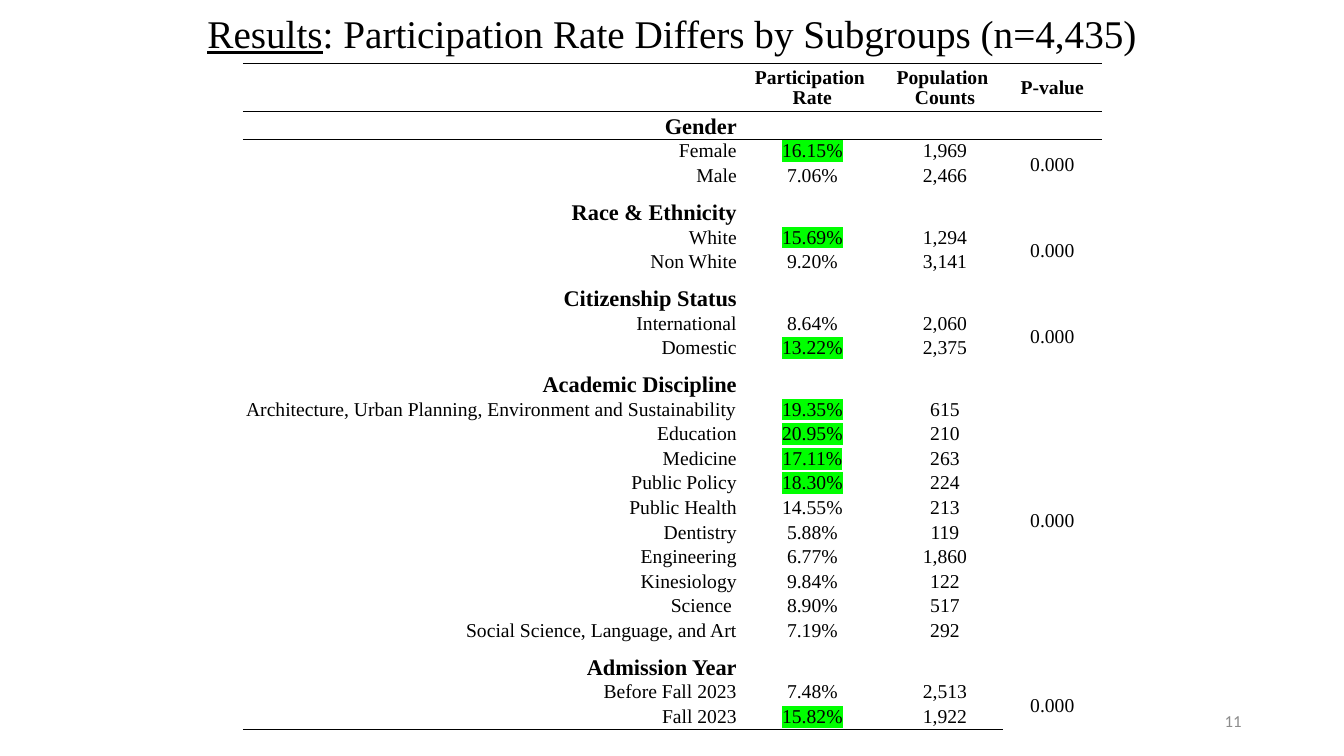
from lxml.etree import SubElement
from pptx import Presentation
from pptx.dml.color import RGBColor
from pptx.enum.text import MSO_ANCHOR as Anchor, PP_ALIGN as Align
from pptx.oxml import parse_xml
from pptx.oxml.ns import nsdecls, qn
from pptx.util import Pt

BLACK = RGBColor(0x00, 0x00, 0x00)
GRAY = RGBColor(0x8C, 0x8C, 0x8C)
GREEN = RGBColor(0x00, 0xFF, 0x00)
SERIF, SANS = "Times New Roman", "Calibri"
PLAIN_TABLE_STYLE = "{2D5ABB26-0587-4C30-8999-92F81FD0307C}"

COLUMN_WIDTHS = (353.5, 106.6, 82.8, 70.6)
HEADER_HEIGHT, FIRST_GROUP_HEIGHT, GROUP_HEIGHT, ROW_HEIGHT = 34.3, 19.1, 26.4, 17.3
HEADERS = (["Participation ", "Rate"], ["Population ", "Counts"], ["P-value"])

# Group, p-value, then (subgroup, rate, count, highlighted)
GROUPS = [
    ("Gender", "0.000", [
        ("Female", "16.15%", "1,969", True),
        ("Male", "7.06%", "2,466", False)]),
    ("Race & Ethnicity", "0.000", [
        ("White", "15.69%", "1,294", True),
        ("Non White", "9.20%", "3,141", False)]),
    ("Citizenship Status", "0.000", [
        ("International", "8.64%", "2,060", False),
        ("Domestic", "13.22%", "2,375", True)]),
    ("Academic Discipline", "0.000", [
        ("Architecture, Urban Planning, Environment and Sustainability",
         "19.35%", "615", True),
        ("Education", "20.95%", "210", True),
        ("Medicine", "17.11%", "263", True),
        ("Public Policy", "18.30%", "224", True),
        ("Public Health", "14.55%", "213", False),
        ("Dentistry", "5.88%", "119", False),
        ("Engineering", "6.77%", "1,860", False),
        ("Kinesiology", "9.84%", "122", False),
        ("Science ", "8.90%", "517", False),
        ("Social Science, Language, and Art", "7.19%", "292", False)]),
    ("Admission Year", "0.000", [
        ("Before Fall 2023", "7.48%", "2,513", False),
        ("Fall 2023", "15.82%", "1,922", True)]),
]


def add_run(paragraph, text, size, font=SERIF, color=BLACK, bold=False,
            underline=False, highlight=None):
    run = paragraph.add_run()
    run.text = text
    run.font.size = Pt(size)
    run.font.name = font
    run.font.bold = bold
    run.font.underline = underline
    run.font.color.rgb = color
    if highlight is not None:
        run.font.fill._xPr.find(qn("a:solidFill")).addnext(parse_xml(
            f'<a:highlight {nsdecls("a")}><a:srgbClr val="{highlight}"/></a:highlight>'))


def add_text_box(slide, left, top, width, height, align, anchor):
    frame = slide.shapes.add_textbox(
        Pt(left), Pt(top), Pt(width), Pt(height)).text_frame
    frame.word_wrap = True
    frame.vertical_anchor = anchor
    paragraph = frame.paragraphs[0]
    paragraph.alignment = align
    return paragraph


def add_title(slide, left, top, width, height):
    title = add_text_box(slide, left, top, width, height, Align.CENTER, Anchor.TOP)
    add_run(title, "Results", 28, underline=True)
    add_run(title, ": Participation Rate Differs by Subgroups (n=4,435)", 28)


def add_page_number(slide, left, top, width, height):
    number = add_text_box(slide, left, top, width, height, Align.RIGHT, Anchor.MIDDLE)
    add_run(number, "11", 12, font=SANS, color=GRAY)


def write_cell(cell, lines, align=Align.CENTER, anchor=Anchor.TOP, size=14,
               bold=False, highlight=None):
    cell.vertical_anchor = anchor
    frame = cell.text_frame
    for index, line in enumerate(lines):
        paragraph = frame.add_paragraph() if index else frame.paragraphs[0]
        paragraph.alignment = align
        if len(lines) > 1:
            paragraph.line_spacing = 0.93
        add_run(paragraph, line, size, bold=bold, highlight=highlight)


def rule_row(table, row, sides, width):
    for column in range(len(COLUMN_WIDTHS)):
        properties = table.cell(row, column)._tc.get_or_add_tcPr()
        for position, side in enumerate(sides):
            properties.insert(position, parse_xml(
                f'<a:ln{side} {nsdecls("a")} w="{Pt(width)}"><a:solidFill>'
                f'<a:srgbClr val="{BLACK}"/></a:solidFill></a:ln{side}>'))


def add_results_table(slide, left, top):
    heights = [HEADER_HEIGHT]
    for index, (_, _, subgroups) in enumerate(GROUPS):
        heights.append(GROUP_HEIGHT if index else FIRST_GROUP_HEIGHT)
        heights += [ROW_HEIGHT] * len(subgroups)
    table = slide.shapes.add_table(
        len(heights), len(COLUMN_WIDTHS), Pt(left), Pt(top),
        Pt(sum(COLUMN_WIDTHS)), Pt(sum(heights))).table
    table.first_row = table.horz_banding = False
    table._tbl.tblPr.find(qn("a:tableStyleId")).text = PLAIN_TABLE_STYLE
    for column, width in zip(table.columns, COLUMN_WIDTHS):
        column.width = Pt(width)
    for row, height in zip(table.rows, heights):
        row.height = Pt(height)
    for cell in table.iter_cells():
        cell.fill.background()
        cell.margin_left = cell.margin_right = cell.margin_top = Pt(0.72)
        cell.margin_bottom = 0

    # Header
    for column, lines in enumerate(HEADERS, 1):
        write_cell(table.cell(0, column), lines, anchor=Anchor.MIDDLE, bold=True)

    # Groups with their subgroups
    row = 1
    for group, p_value, subgroups in GROUPS:
        write_cell(table.cell(row, 0), [group], Align.RIGHT, Anchor.BOTTOM, 16, True)
        first, last = row + 1, row + len(subgroups)
        for row, (subgroup, rate, count, highlighted) in enumerate(subgroups, first):
            write_cell(table.cell(row, 0), [subgroup], Align.RIGHT)
            write_cell(table.cell(row, 1), [rate],
                       highlight=GREEN if highlighted else None)
            write_cell(table.cell(row, 2), [count])
        table.cell(first, 3).merge(table.cell(last, 3))
        write_cell(table.cell(first, 3), [p_value], anchor=Anchor.MIDDLE)
        row = last + 1

    # Small type in empty cells keeps the rows tight
    for cell in table.iter_cells():
        if not cell.text_frame.text:
            SubElement(cell.text_frame.paragraphs[0]._p, qn("a:endParaRPr"), sz="1400")

    # Horizontal rules
    rule_row(table, 0, "TB", 0.5)
    rule_row(table, 1, "T", 0.5)
    rule_row(table, len(heights) - 1, "B", 1)


def main():
    deck = Presentation()
    deck.slide_width, deck.slide_height = Pt(960), Pt(540)
    slide = deck.slides.add_slide(deck.slide_layouts[6])
    add_title(slide, 0, 2.9, 960, 41)
    add_results_table(slide, 173.5, 45.4)
    add_page_number(slide, 678, 500.5, 216, 28.8)
    deck.save("out.pptx")


if __name__ == "__main__":
    main()
